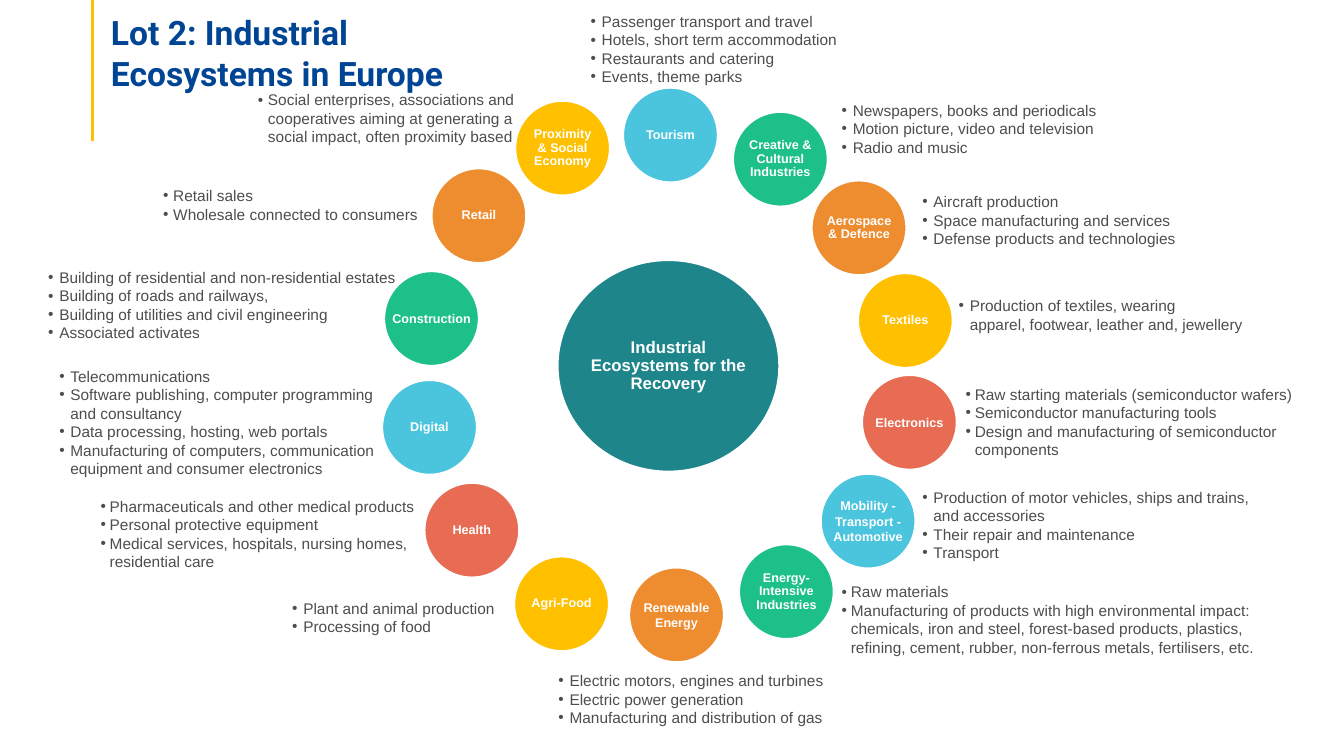
"""Build the slide on the industrial ecosystems in Europe."""
from lxml.etree import SubElement as Sub
from pptx import Presentation
from pptx.dml.color import RGBColor as RGB
from pptx.enum.shapes import MSO_CONNECTOR as Conn, MSO_SHAPE as Shape
from pptx.enum.text import MSO_ANCHOR as Anchor, PP_ALIGN as Align
from pptx.oxml.ns import qn
from pptx.util import Inches, Pt

TEAL, BLUE, GREEN = "1E858B", "4BC5DE", "1EC08A"
ORANGE, YELLOW, RED = "ED8D2F", "FFC000", "E76C53"
WHITE, GREY, NAVY = "FFFFFF", "4D4D4D", "004494"
SIZE = 0.94

deck = Presentation()
deck.slide_width, deck.slide_height = Inches(13.33), Inches(7.5)
slide = deck.slides.add_slide(deck.slide_layouts[5])
shapes = slide.shapes


def color(form, code):
    """Apply a hex colour to a colour format."""
    form.rgb = RGB.from_string(code)


def write(box, lines, size=11, face="Arial", ink=GREY, bold=False, align=Align.LEFT,
          anchor=Anchor.TOP, pad=None, space=1.0, indent=None):
    """Fill a box with formatted paragraphs."""
    frame = box.text_frame
    frame.word_wrap = True
    frame.vertical_anchor = anchor
    if pad is not None:
        frame.margin_left = frame.margin_right = Inches(pad)
        frame.margin_top = frame.margin_bottom = Inches(pad)
    for i, line in enumerate(lines):
        para = frame.add_paragraph() if i else frame.paragraphs[0]
        para.text = line
        para.alignment = align
        para.line_spacing = space
        if indent:
            props = para._p.get_or_add_pPr()
            left, hang = indent
            props.set("marL", str(Inches(left)))
            props.set("indent", str(-Inches(hang)))
            Sub(props, qn("a:buFont")).set("typeface", "Arial")
            Sub(props, qn("a:buChar")).set("char", "•")
        for font in [para.font] + [run.font for run in para.runs]:
            font.size, font.name, font.bold = Pt(size), face, bold
            color(font.color, ink)


rule = shapes.add_connector(Conn.STRAIGHT, Inches(0.92), 0, Inches(0.92), Inches(1.4))
rule.line.width = Pt(2.25)
color(rule.line.color, YELLOW)
Sub(rule._element.spPr, qn("a:effectLst"))

title = shapes.title
title.left, title.top, title.width, title.height = map(Inches, (1, 0.07, 3.85, 1.11))
write(title, ["Lot 2: Industrial Ecosystems in Europe"], size=24, face="Roboto",
      ink=NAVY, bold=True)

discs = [
    (5.53, 2.58, 2.2, 2.1, TEAL, "Industrial Ecosystems for the Recovery", 1.56, 12, 0.9),
]
nodes = [
    (6.18, 0.87, BLUE, "Tourism"),
    (7.27, 1.11, GREEN, "Creative & Cultural Industries"),
    (8.05, 1.79, ORANGE, "Aerospace & Defence"),
    (8.51, 2.71, YELLOW, "Textiles"),
    (8.55, 3.72, RED, "Electronics"),
    (8.14, 4.7, BLUE, "Mobility - Transport - Automotive"),
    (7.33, 5.4, GREEN, "Energy-Intensive Industries"),
    (6.24, 5.63, ORANGE, "Renewable Energy"),
    (5.1, 5.52, YELLOW, "Agri-Food"),
    (4.21, 4.79, RED, "Health"),
    (3.79, 3.77, BLUE, "Digital"),
    (3.81, 2.69, GREEN, "Construction"),
    (4.28, 1.67, ORANGE, "Retail"),
    (5.11, 1, YELLOW, "Proximity & Social Economy"),
]
wide = {"Electronics", "Mobility - Transport - Automotive", "Renewable Energy",
        "Construction"}
for x, y, fill, name in nodes:
    room, space = (0.9, 1.0) if name in wide else (0.66, 0.9)
    discs.append((x, y, SIZE, SIZE, fill, name, room, 9, space))

for x, y, w, h, fill, name, room, size, space in discs:
    disc = shapes.add_shape(Shape.OVAL, Inches(x), Inches(y), Inches(w), Inches(h))
    disc.shadow.inherit = False
    disc.fill.solid()
    color(disc.fill.fore_color, fill)
    disc.line.width = Pt(1.5)
    color(disc.line.color, WHITE)
    label = shapes.add_textbox(Inches(x + (w - room) / 2), Inches(y + 0.14),
                               Inches(room), Inches(h - 0.28))
    write(label, [name], size=size, ink=WHITE, bold=True, align=Align.CENTER,
          anchor=Anchor.MIDDLE, pad=0.01, space=space)

far, near = (0.31, 0.11), (0.1, 0.1)
lists = [
    (5.56, 0.07, 3.29, 0.84, far, [
        "Passenger transport and travel", "Hotels, short term accommodation",
        "Restaurants and catering", "Events, theme parks"]),
    (8.05, 0.95, 3.73, 0.66, far, [
        "Newspapers, books and periodicals", "Motion picture, video and television",
        "Radio and music"]),
    (8.85, 1.86, 3.28, 0.66, far, [
        "Aircraft production", "Space manufacturing and services",
        "Defense products and technologies"]),
    (9.21, 2.89, 3.32, 0.47, far, [
        "Production of textiles, wearing\vapparel, footwear, leather and, jewellery"]),
    (9.38, 3.77, 3.54, 0.84, (0.19, 0.09), [
        "Raw starting materials (semiconductor wafers)",
        "Semiconductor manufacturing tools",
        "Design and manufacturing of semiconductor components"]),
    (8.85, 4.79, 3.8, 0.84, far, [
        "Production of motor vehicles, ships and trains, and accessories",
        "Their repair and maintenance", "Transport"]),
    (8.05, 5.73, 4.61, 0.84, (0.29, 0.09), [
        "Raw materials",
        "Manufacturing of products with high environmental impact: chemicals, iron and "
        "steel, forest-based products, plastics, refining, cement, rubber, non-ferrous "
        "metals, fertilisers, etc."]),
    (5.24, 6.61, 3.31, 0.66, far, [
        "Electric motors, engines and turbines", "Electric power generation",
        "Manufacturing and distribution of gas"]),
    (2.6, 5.89, 2.7, 0.47, far, ["Plant and animal production", "Processing of food"]),
    (0.9, 4.88, 3.73, 0.84, (0.09, 0.09), [
        "Pharmaceuticals and other medical products", "Personal protective equipment",
        "Medical services, hospitals, nursing homes, residential care"]),
    (0.29, 3.59, 3.67, 1.21, far, [
        "Telecommunications",
        "Software publishing, computer programming and consultancy",
        "Data processing, hosting, web portals",
        "Manufacturing of computers, communication equipment and consumer electronics"]),
    (0.18, 2.61, 4.1, 0.84, far, [
        "Building of residential and non-residential estates",
        "Building of roads and railways,", "Building of utilities and civil engineering",
        "Associated activates"]),
    (1.52, 1.8, 3.07, 0.47, near, ["Retail sales", "Wholesale connected to consumers"]),
    (2.46, 0.85, 3, 0.66, near, [
        "Social enterprises, associations and cooperatives aiming at generating a social "
        "impact, often proximity based"]),
]
for x, y, w, h, indent, lines in lists:
    box = shapes.add_textbox(Inches(x), Inches(y), Inches(w), Inches(h))
    write(box, lines, indent=indent)

deck.save("out.pptx")
